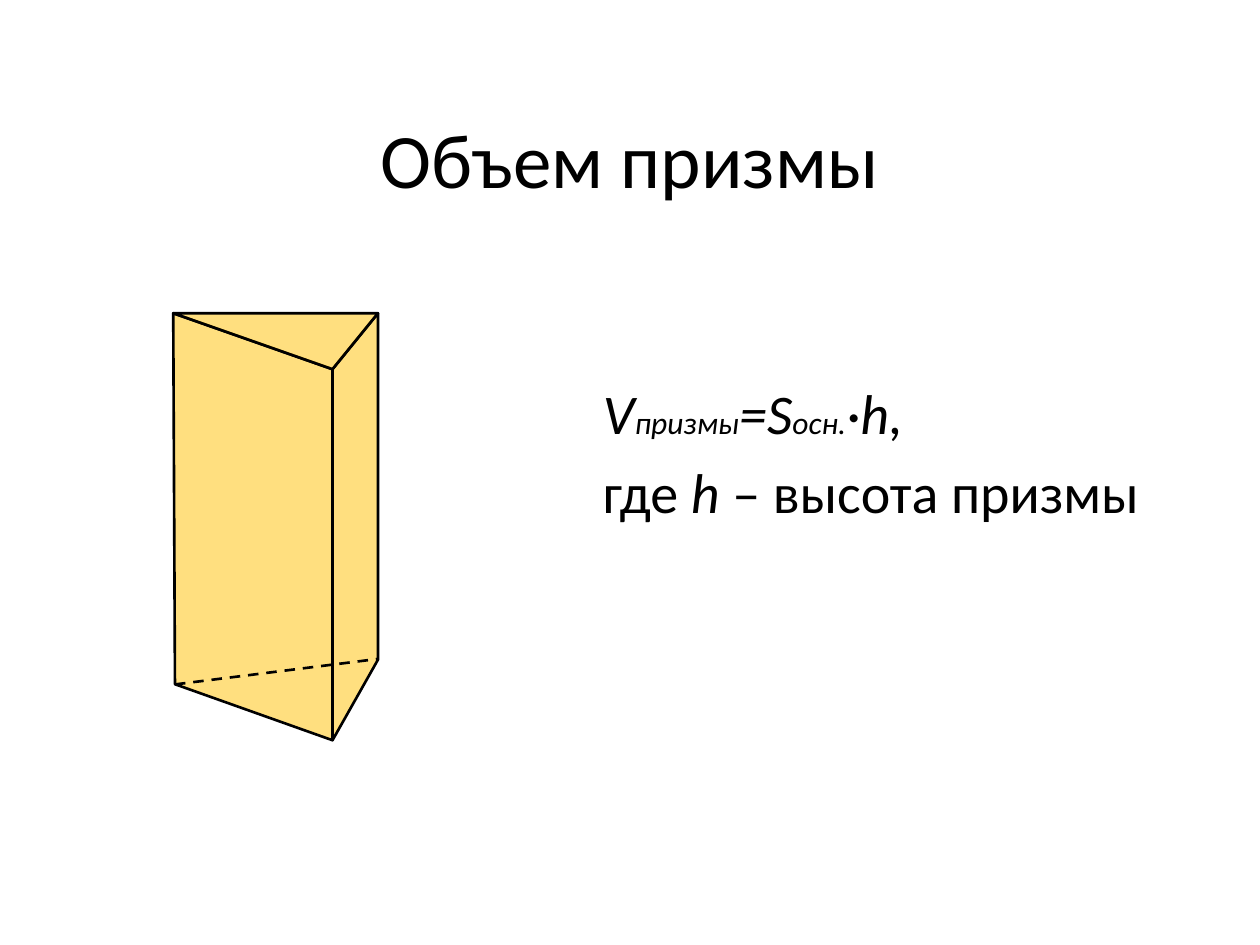
from lxml.etree import SubElement
from pptx import Presentation
from pptx.dml.color import RGBColor
from pptx.enum.dml import MSO_LINE
from pptx.enum.shapes import MSO_CONNECTOR
from pptx.enum.text import MSO_ANCHOR, PP_ALIGN
from pptx.oxml.ns import qn
from pptx.util import Pt

FONT = "Calibri"
BLACK = "000000"
GOLD = "FFC000"
EDGE_WIDTH = 1.5


def color(hex_value):
    return RGBColor.from_string(hex_value)


def style_run(run, size, italic=False):
    run.font.name = FONT
    run.font.size = Pt(size)
    run.font.italic = italic
    run.font.color.rgb = color(BLACK)


def style_edge(line):
    line.color.rgb = color(BLACK)
    line.width = Pt(EDGE_WIDTH)


def place_title(slide, left, top, width, height):
    title = slide.shapes.title
    title.left, title.top, title.width, title.height = map(Pt, (left, top, width, height))
    frame = title.text_frame
    frame.text = "Объем призмы"
    frame.vertical_anchor = MSO_ANCHOR.MIDDLE
    heading = frame.paragraphs[0]
    heading.alignment = PP_ALIGN.CENTER
    style_run(heading.runs[0], 44)


def add_formula(slide, left, top, width, height):
    frame = slide.shapes.add_textbox(*map(Pt, (left, top, width, height))).text_frame
    frame.word_wrap = True
    lines = [
        [("V", 32, True), ("призмы", 18, True), ("=S", 32, True),
         ("осн.", 18, True), ("·h,", 32, True)],
        [("где", 32, False), (" h", 32, True), (" – высота призмы", 32, False)],
    ]
    for index, pieces in enumerate(lines):
        paragraph = frame.paragraphs[0] if index == 0 else frame.add_paragraph()
        paragraph.space_before = Pt(6.4)
        for text, size, italic in pieces:
            run = paragraph.add_run()
            run.text = text
            style_run(run, size, italic)


def add_face(shapes, corners):
    """Add a half-transparent polygon through the corners."""
    builder = shapes.build_freeform(*corners[0], scale=Pt(1))
    builder.add_line_segments(corners[1:], close=True)
    face = builder.convert_to_shape()
    face.shadow.inherit = False
    face.fill.solid()
    face.fill.fore_color.rgb = color(GOLD)
    rgb = face.fill._xPr.find(qn("a:solidFill")).find(qn("a:srgbClr"))
    SubElement(rgb, qn("a:alpha"), val="50000")
    style_edge(face.line)


def add_prism(slide, left, top, width, height):
    front_x, right_x = left + 0.78 * width, left + width
    front_drop = 31.5
    bottom = top + height
    top_left, top_right = (left, top), (right_x, top)
    top_front = (front_x, top + front_drop)
    base_left = (left + 0.7, bottom - front_drop)
    base_front = (front_x, bottom)
    base_right = (right_x, bottom - 46)

    faces = slide.shapes.add_group_shape().shapes
    add_face(faces, [top_left, top_front, base_front, base_left])
    add_face(faces, [top_front, top_right, base_right, base_front])
    add_face(faces, [top_front, top_right, top_left])

    hidden_edge = slide.shapes.add_connector(
        MSO_CONNECTOR.STRAIGHT, *map(Pt, base_left + base_right))
    style_edge(hidden_edge.line)
    hidden_edge.line.dash_style = MSO_LINE.DASH
    SubElement(hidden_edge._element.spPr, qn("a:effectLst"))


def main():
    prs = Presentation()
    prs.slide_width, prs.slide_height = Pt(720), Pt(540)
    slide = prs.slides.add_slide(prs.slide_layouts[5])
    place_title(slide, 36, 36, 648, 108)
    add_formula(slide, 337.5, 213, 329, 306)
    add_prism(slide, 99.3, 179.4, 116.2, 243.2)
    prs.save("out.pptx")


if __name__ == "__main__":
    main()
